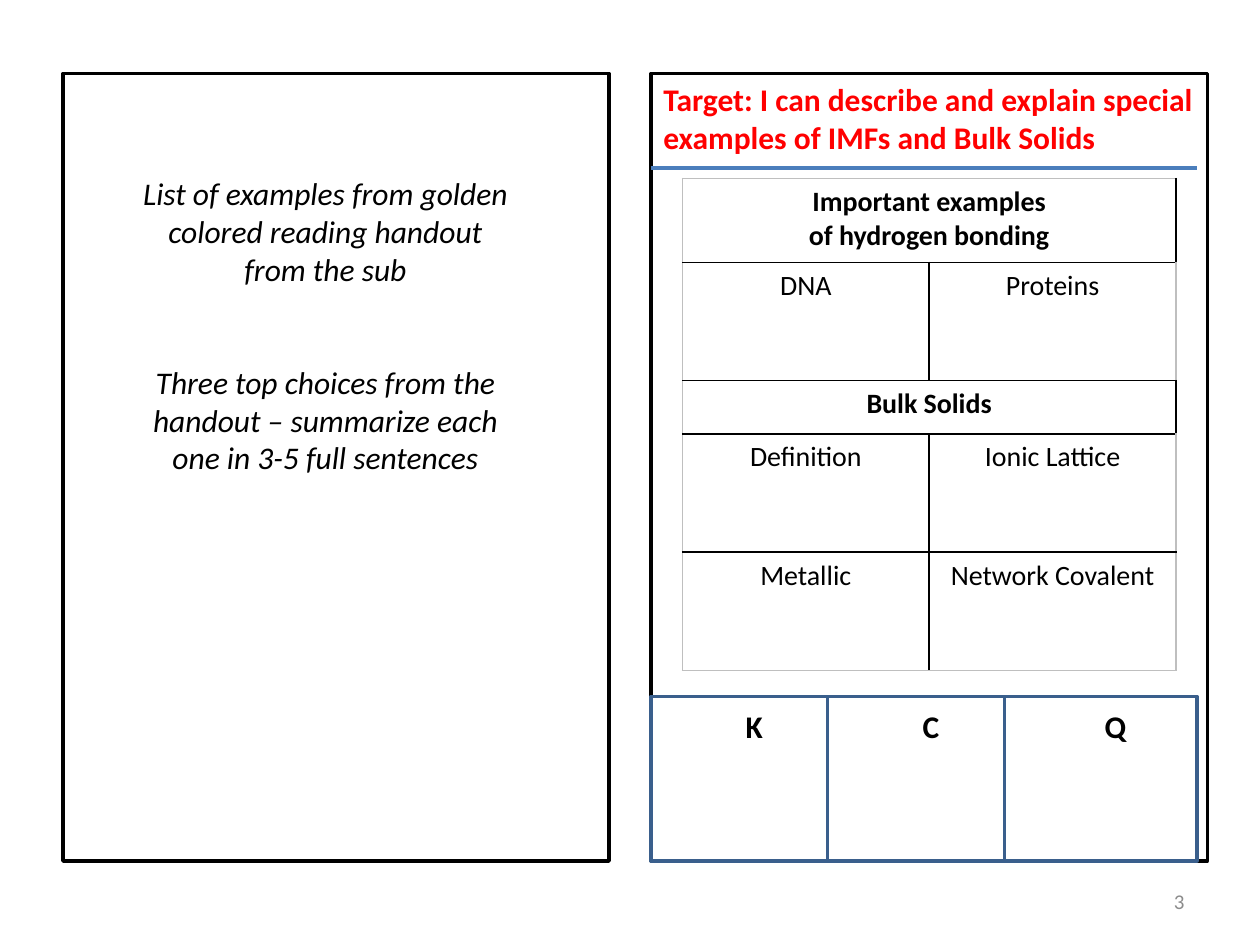
from lxml import etree
from pptx import Presentation
from pptx import util as u
from pptx.dml import color
from pptx.enum import shapes, text
from pptx.oxml import ns

BLACK = color.RGBColor(0x00, 0x00, 0x00)
RED = color.RGBColor(0xFF, 0x00, 0x00)
GRAY = color.RGBColor(0x8C, 0x8C, 0x8C)
LIGHT_GRAY = color.RGBColor(0xBF, 0xBF, 0xBF)
NAVY = color.RGBColor(0x3A, 0x5F, 0x8C)
BLUE = color.RGBColor(0x4B, 0x7E, 0xBC)

CENTER = text.PP_ALIGN.CENTER
RIGHT = text.PP_ALIGN.RIGHT

PANEL_TOP, PANEL_HEIGHT = 42, 450
NOTES_LEFT = 372
TABLE_ROWS = [
    (48, ["Important examples\vof hydrogen bonding"]),
    (67.5, ["DNA", "Proteins"]),
    (30.5, ["Bulk Solids"]),
    (67.5, ["Definition", "Ionic Lattice"]),
    (67.5, ["Metallic", "Network Covalent"]),
]


class Page:
    font = {"name": "Calibri", "size": u.Pt(18)}

    def __init__(self, slide):
        self.slide = slide

    def fill_text(self, frame, paragraphs, align=None, tint=BLACK, gap=0, **formats):
        for index, content in enumerate(paragraphs):
            paragraph = frame.add_paragraph() if index else frame.paragraphs[0]
            paragraph.text = content
            paragraph.alignment = align
            if index:
                paragraph.space_before = u.Pt(gap)
            for name, value in {**self.font, **formats}.items():
                setattr(paragraph.font, name, value)
            paragraph.font.color.rgb = tint

    def box(self, left, top, width, height, tint):
        shape = self.slide.shapes.add_shape(
            shapes.MSO_SHAPE.RECTANGLE, *map(u.Pt, (left, top, width, height)))
        shape.shadow.inherit = False
        shape.fill.background()
        shape.line.color.rgb = tint
        shape.line.width = u.Pt(2)
        frame = shape.text_frame
        frame.word_wrap = True
        frame.vertical_anchor = text.MSO_ANCHOR.TOP
        return frame

    def label(self, left, top, width, height, paragraphs,
              anchor=text.MSO_ANCHOR.TOP, **formats):
        shape = self.slide.shapes.add_textbox(*map(u.Pt, (left, top, width, height)))
        shape.text_frame.word_wrap = True
        shape.text_frame.vertical_anchor = anchor
        self.fill_text(shape.text_frame, paragraphs, **formats)

    def rule(self, left, right, top):
        line = self.slide.shapes.add_connector(
            shapes.MSO_CONNECTOR.STRAIGHT, *map(u.Pt, (left, top, right, top)))
        line.line.color.rgb = BLUE
        line.line.width = u.Pt(2.25)
        etree.SubElement(line._element.spPr, ns.qn("a:effectLst"))

    def border(self, cell, side, outer):
        width, tint = (0.75, LIGHT_GRAY) if outer else (1, BLACK)
        properties = cell._tc.get_or_add_tcPr()
        edge = etree.SubElement(properties, ns.qn(f"a:ln{side}"), w=str(u.Pt(width)))
        fill = etree.SubElement(edge, ns.qn("a:solidFill"))
        etree.SubElement(fill, ns.qn("a:srgbClr"), val=str(tint))

    def table(self, left, top, column_width, rows):
        height = sum(row_height for row_height, _ in rows)
        table = self.slide.shapes.add_table(
            len(rows), 2, *map(u.Pt, (left, top, 2 * column_width, height))).table
        table.first_row = table.horz_banding = False
        for column in table.columns:
            column.width = u.Pt(column_width)
        for index, (row_height, labels) in enumerate(rows):
            table.rows[index].height = u.Pt(row_height)
            heading = len(labels) == 1
            for position in range(2):
                cell = table.cell(index, position)
                self.border(cell, "L", position == 0)
                self.border(cell, "R", position == 1)
                self.border(cell, "T", index == 0)
                self.border(cell, "B", index == len(rows) - 1)
                cell.fill.background()
            if heading:
                table.cell(index, 0).merge(table.cell(index, 1))
            for position, content in enumerate(labels):
                self.fill_text(table.cell(index, position).text_frame, [content],
                               align=CENTER, size=u.Pt(16), bold=heading)


def main():
    presentation = Presentation()
    presentation.slide_width = u.Pt(720)
    presentation.slide_height = u.Pt(540)
    page = Page(presentation.slides.add_slide(presentation.slide_layouts[6]))

    target = page.box(NOTES_LEFT, PANEL_TOP, 318, PANEL_HEIGHT, BLACK)
    page.fill_text(target, ["Target: I can describe and explain special examples "
                            "of IMFs and Bulk Solids"],
                   align=text.PP_ALIGN.LEFT, tint=RED, bold=True)
    page.box(36, PANEL_TOP, 312, PANEL_HEIGHT, BLACK)

    left = NOTES_LEFT
    for letter, width in (("K", 101), ("C", 101), ("Q", 110)):
        frame = page.box(left, 398, width, 94, NAVY)
        frame.margin_left = u.Pt(24)
        frame.margin_top = u.Pt(6)
        page.fill_text(frame, [letter], align=CENTER, bold=True)
        left += width

    page.rule(NOTES_LEFT, left, 96)
    page.table(390, 102, 141, TABLE_ROWS)
    page.label(72, 96, 228, 181.5,
               ["List of examples from golden colored reading handout from the sub",
                "Three top choices from the handout – summarize each one "
                "in 3-5 full sentences"],
               align=CENTER, gap=43, italic=True)
    page.label(516, 500.5, 168, 29, ["3"], anchor=text.MSO_ANCHOR.MIDDLE,
               align=RIGHT, tint=GRAY, size=u.Pt(12))
    presentation.save("out.pptx")


if __name__ == "__main__":
    main()
